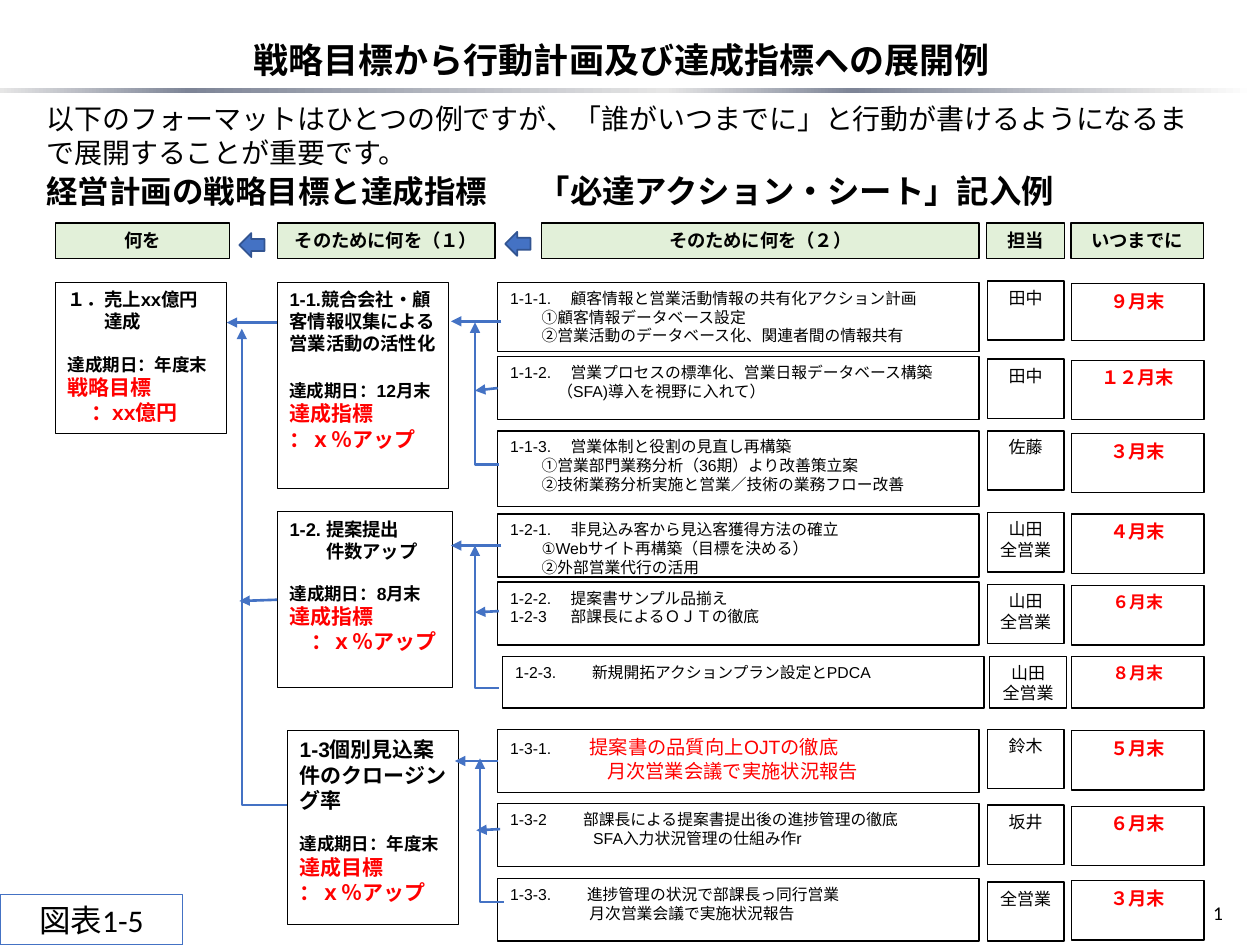
from pptx import Presentation
from pptx import util as u
from pptx.dml.color import RGBColor
from pptx.enum import shapes, text
from pptx.oxml.ns import qn
from lxml import etree

GOTHIC, ARIAL, CALIBRI = "Noto Sans CJK JP", "Arial", "Calibri"
BLACK, RED, BLUE, GREEN = "000000", "FF0000", "4472C4", "E2F0D9"
CENTER = text.PP_ALIGN.CENTER
COLUMNS, ROWS = 100, 75


def color(value):
    return RGBColor.from_string(value)


def line(words, indent=0, **style):
    return {"spans": [(words, style)], "indent": indent, "before": 0}


def after_gap(*spans):
    return {"spans": spans, "indent": 0, "before": 12}


class Sheet:
    def __init__(self, deck):
        self.deck = deck
        self.page = deck.slides.add_slide(deck.slide_layouts[6])
        self.style = {"font": ARIAL, "size": 9, "ink": BLACK, "bold": False}

    def across(self, columns):
        return round(self.deck.slide_width * columns / COLUMNS)

    def down(self, rows):
        return round(self.deck.slide_height * rows / ROWS)

    def area(self, left, top, width, height):
        return self.across(left), self.down(top), self.across(width), self.down(height)

    def set_lines(self, box, lines, align=None, **style):
        frame = box.text_frame
        for name, value in {"word_wrap": True, "vertical_anchor": text.MSO_ANCHOR.TOP,
                            "auto_size": text.MSO_AUTO_SIZE.NONE}.items():
            setattr(frame, name, value)
        base = {**self.style, **style}
        for index, item in enumerate(lines):
            if isinstance(item, str):
                item = line(item)
            para = frame.add_paragraph() if index else frame.paragraphs[0]
            spans = [(words, {**base, **own}) for words, own in item["spans"]]
            largest = max(look["size"] for words, look in spans)
            for name, value in {"alignment": align or text.PP_ALIGN.LEFT,
                                "line_spacing": u.Pt(round(largest * 1.2, 1)),
                                "space_before": u.Pt(item["before"])}.items():
                setattr(para, name, value)
            indent = self.across(item["indent"])
            hanging = any("\t" in words for words, look in spans)
            properties = para._p.get_or_add_pPr()
            properties.set("marL", str(indent))
            properties.set("indent", str(-indent if hanging else 0))
            for words, look in spans:
                span = para.add_run()
                span.text = words
                for name, value in {"name": look["font"], "size": u.Pt(look["size"]),
                                    "bold": look["bold"]}.items():
                    setattr(span.font, name, value)
                span.font.color.rgb = color(look["ink"])
                east = etree.SubElement(span._r.get_or_add_rPr(), qn("a:ea"))
                east.set("typeface", GOTHIC)

    def label(self, place, lines, **style):
        self.set_lines(self.page.shapes.add_textbox(*self.area(*place)), lines, **style)

    def shape(self, place, fill=None, edge=BLACK, weight=0.75,
              kind=shapes.MSO_SHAPE.RECTANGLE):
        box = self.page.shapes.add_shape(kind, *self.area(*place))
        box.shadow.inherit = False
        if fill:
            box.fill.solid()
            box.fill.fore_color.rgb = color(fill)
        else:
            box.fill.background()
        box.line.color.rgb = color(edge)
        box.line.width = u.Pt(weight)
        return box

    def card(self, place, lines, fill=None, edge=BLACK, **style):
        box = self.shape(place, fill, edge)
        self.set_lines(box, lines, **style)
        return box

    def rule(self, place, stops):
        box = self.shape(place)
        box.line.fill.background()
        box.fill.gradient()
        box.fill.gradient_angle = 180
        stop_list = box.element.spPr.find(".//" + qn("a:gsLst"))
        for stop in list(stop_list):
            stop_list.remove(stop)
        for position, value in stops:
            stop = etree.SubElement(stop_list, qn("a:gs"), pos=str(position * 1000))
            etree.SubElement(stop, qn("a:srgbClr"), val=value)

    def arrow(self, left, top, right, bottom, source=None, bent=False):
        kind = shapes.MSO_CONNECTOR.ELBOW if bent else shapes.MSO_CONNECTOR.STRAIGHT
        connector = self.page.shapes.add_connector(
            kind, self.across(left), self.down(top), self.across(right), self.down(bottom))
        connector.line.color.rgb = color(BLUE)
        connector.line.width = u.Pt(1.5)
        if source is not None:
            connector.begin_connect(source, 1)
        properties = connector.element.spPr
        if bent:
            properties.find(qn("a:prstGeom")).set("prst", "bentConnector2")
        etree.SubElement(properties.find(qn("a:ln")), qn("a:tailEnd"), type="triangle")
        etree.SubElement(properties, qn("a:effectLst"))


HEADERS = [(4.4, 13.8, "何を"), (22, 17.3, "そのために何を（１）"),
           (43, 34.7, "そのために何を（２）"), (78.3, 6.2, "担当"), (85, 10.5, "いつまでに")]
LARGE = {"size": 12, "ink": RED}
SMALL = {"size": 10}
GOALS = [
    ((4.4, 22.4, 13.6, 12), ["１．売上xx億円", line("達成", 2.9),
     after_gap(("達成期日：年度末", SMALL)), line("戦略目標", **LARGE),
     line("：xx億円", 1.85, **LARGE)]),
    ((22, 22.4, 13.6, 16.4), ["1-1.競合会社・顧客情報収集による営業活動の活性化",
     after_gap(("達成期日：12月末", SMALL), ("達成指標", LARGE)),
     line("：ｘ％アップ", **LARGE)]),
    ((22, 40.6, 13.9, 14), ["1-2. 提案提出", line("件数アップ", 2.9),
     after_gap(("達成期日：8月末", SMALL)), line("達成指標", **LARGE),
     line("：ｘ％アップ", 1.7, **LARGE)]),
    ((22.8, 58, 13.6, 15.4), [line("1-3個別見込案件のクロージング率", size=12),
     after_gap(("達成期日：年度末", SMALL)), line("達成目標", **LARGE),
     line("：ｘ％アップ", **LARGE)]),
]
PROPOSAL = {"spans": [("1-3-1.\t", {}), ("提案書の品質向上OJTの徹底", {"size": 11, "ink": RED})],
            "indent": 6.3, "before": 0}
TEAM = ["山田", "全営業"]
ACTIONS = [
    (39.5, 22.4, 5.5, [line("1-1-1.\t顧客情報と営業活動情報の共有化アクション計画", 4.8),
     line("①顧客情報データベース設定", 2.5),
     line("②営業活動のデータベース化、関連者間の情報共有", 2.5)],
     (22.3, 4.7, ["田中"]), (22.5, 4.5, "９月末", 10.5)),
    (39.5, 28.3, 5, [line("1-1-2.\t営業プロセスの標準化、営業日報データベース構築", 4.8),
     line("（SFA)導入を視野に入れて）", 3.75)],
     (28.5, 4.7, ["田中"]), (28.6, 4.7, "１２月末", 10.5)),
    (39.5, 34.2, 6, [line("1-1-3.\t営業体制と役割の見直し再構築", 4.8),
     line("①営業部門業務分析（36期）より改善策立案", 2.5),
     line("②技術業務分析実施と営業／技術の業務フロー改善", 2.5)],
     (34.2, 4.7, ["佐藤"]), (34.4, 4.7, "３月末", 10.5)),
    (39.5, 40.8, 5, [line("1-2-1.\t非見込み客から見込客獲得方法の確立", 4.8),
     line("①Webサイト再構築（目標を決める）", 2.5), line("②外部営業代行の活用", 2.5)],
     (40.7, 4.7, TEAM), (40.8, 4.7, "４月末", 10.5)),
    (39.5, 46.2, 5, [line("1-2-2.\t提案書サンプル品揃え", 4.8),
     line("1-2-3\t部課長によるＯＪＴの徹底", 4.8)],
     (46.4, 4.7, TEAM), (46.5, 4.7, "６月末", 9.7)),
    (39.9, 52.1, 4.1, [line("1-2-3.\t新規開拓アクションプラン設定とPDCA", 6.1)],
     (52.1, 4.1, TEAM), (52.1, 4.1, "８月末", 9.7)),
    (39.5, 57.9, 5, [PROPOSAL, line("月次営業会議で実施状況報告", 7.7, size=11, ink=RED)],
     (57.9, 4.7, ["鈴木"]), (58, 4.7, "５月末", 10.5)),
    (39.5, 63.8, 5, [line("1-3-2\t部課長による提案書提出後の進捗管理の徹底", 5.8),
     line("SFA入力状況管理の仕組み作r", 6.6)],
     (63.9, 4.7, ["坂井"]), (64, 4.7, "６月末", 10.5)),
    (39.5, 69.7, 5, [line("1-3-3.\t進捗管理の状況で部課長っ同行営業", 6.1),
     line("月次営業会議で実施状況報告", 6.3)],
     (70, 4.7, ["全営業"]), (69.9, 4.7, "３月末", 10.5)),
]


def main():
    deck = Presentation()
    deck.slide_width, deck.slide_height = u.Inches(10), u.Inches(7.5)
    sheet = Sheet(deck)
    sheet.rule((0, 7, 99.6, 0.4), [(0, "FFFFFF"), (7, "E6E6E6"), (32, "7D8496"),
                                   (47, "E6E6E6"), (85, "7D8496"), (100, "E6E6E6")])
    sheet.label((95.3, 71, 4.7, 2.9), ["1"], font=CALIBRI, size=11.1)
    heading = {"font": GOTHIC, "bold": True}
    sheet.label((2.7, 13.2, 39.4, 4), ["経営計画の戦略目標と達成指標"], size=18, **heading)
    for left, width, words in HEADERS:
        sheet.card((left, 17.7, width, 2.8), [words], fill=GREEN, align=CENTER,
                   size=10.5, **heading)
    for left, top in [(19, 18.5), (40.1, 18.4)]:
        sheet.shape((left, top, 2, 1.9), BLUE, "325491", 1, shapes.MSO_SHAPE.LEFT_ARROW)
    goals = [sheet.card(place, lines, size=10.5, bold=True) for place, lines in GOALS]
    actions = []
    for left, top, height, lines, owner, due in ACTIONS:
        actions.append(sheet.card((left, top, 38.2, height), lines))
        shift = left - 39.5
        owner_top, owner_height, people = owner
        sheet.card((78.35 + shift / 2, owner_top, 6.1, owner_height), people,
                   align=CENTER, font=GOTHIC, size=9.7)
        due_top, due_height, month, size = due
        sheet.card((85.05, due_top, 10.5, due_height), [month], align=CENTER,
                   size=size, ink=RED, **heading)

    for ends in [(22, 25.6, 18, 25.6), (39.8, 25.5, 35.8, 25.5), (39.8, 43.3, 35.8, 43.3),
                 (39.7, 65.8, 37.8, 65.9), (39.6, 48.5, 37.7, 48.6)]:
        sheet.arrow(*ends)
    for ends, source in [((39.5, 30.8, 37.7, 31), actions[1]),
                         ((39.5, 60.4, 36.1, 60.4), actions[6]),
                         ((22, 47.6, 19, 47.7), goals[2])]:
        sheet.arrow(*ends, source=source)
    for ends in [(39.6, 36.9, 37.7, 25.6), (39.6, 54.6, 37.7, 43.3),
                 (40, 71.6, 38.1, 60.2), (22.8, 63.9, 19.2, 26.1)]:
        sheet.arrow(*ends, bent=True)

    sheet.label((31.9, 13.1, 62.5, 4.1), ["「必達アクション・シート」記入例"],
                align=CENTER, size=18.5, **heading)
    sheet.label((-1.3, 2.6, 101.3, 4.4), ["戦略目標から行動計画及び達成指標への展開例"],
                align=CENTER, size=20, **heading)
    sheet.label((2.7, 7.6, 92.9, 6.4), ["以下のフォーマットはひとつの例ですが、「誰がいつまでに」と"
                "行動が書けるようになるまで展開することが重要です。"], font=GOTHIC, size=16)
    sheet.card((0, 71, 14.5, 4), ["図表1-5"], edge=BLUE, align=CENTER, font=CALIBRI, size=18)
    deck.save("out.pptx")


if __name__ == "__main__":
    main()
